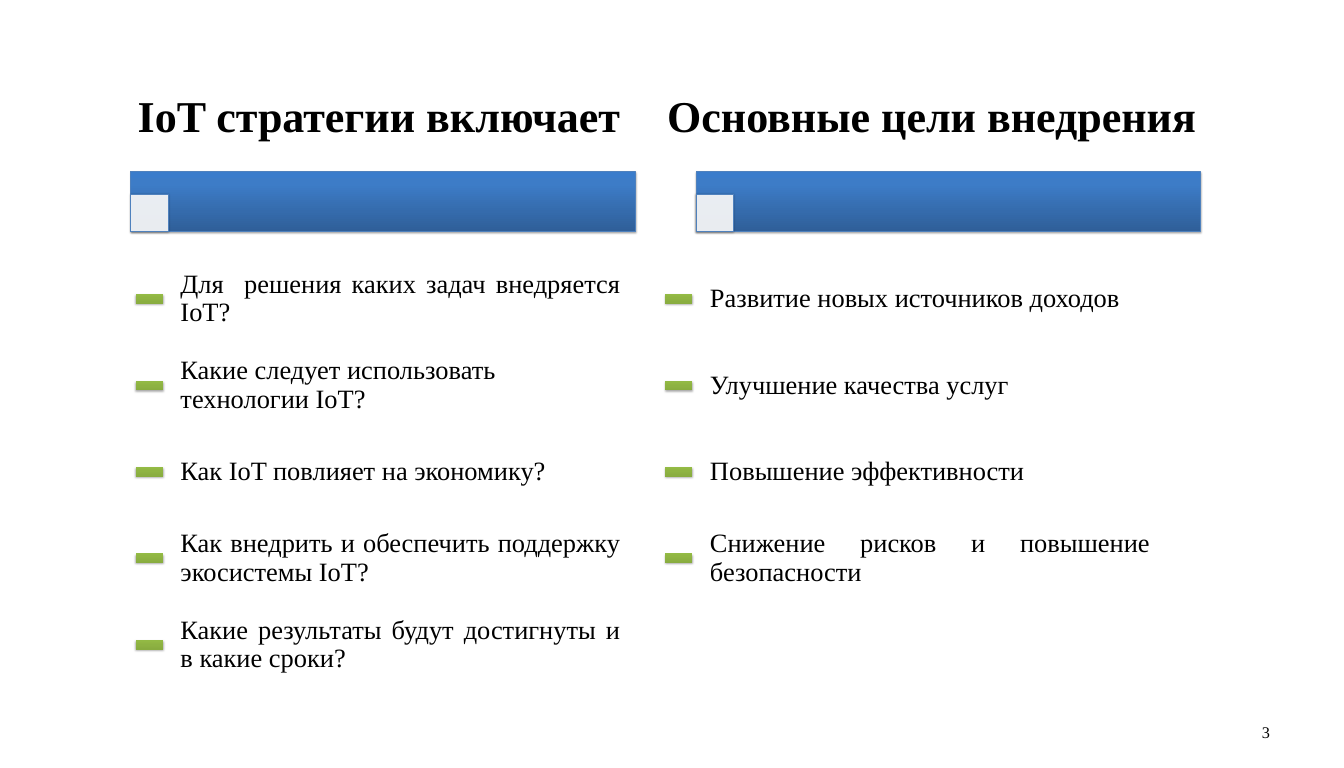
from copy import deepcopy

from lxml import etree
from pptx import Presentation
from pptx.dml.color import RGBColor
from pptx.enum import shapes, text
from pptx.oxml.ns import qn
from pptx.util import Cm, Pt

COLORS = {
    "text": "000000",
    "square": "FFFFFF",
    "outline": "4F81BD",
    "shadow": "000000",
    "blue_dark": "2F5F99",
    "blue_mid": "3D7CC7",
    "blue_light": "3A7CCB",
    "green_dark": "779737",
    "green_mid": "9BC348",
    "green_light": "9DC746",
}
FONT = "Times New Roman"
BAR_W, BAR_H, BAR_TOP = 26.26, 3.1, 5.54
MARK = 1.93
ITEM_TOP, ITEM_H, ITEM_INDENT, ITEM_W = 9.93, 4.5, 1.83, 24.43
LEFT = text.PP_ALIGN.LEFT
RIGHT = text.PP_ALIGN.RIGHT
JUSTIFY = text.PP_ALIGN.JUSTIFY


def rgb(name):
    return RGBColor.from_string(COLORS[name])


def add_text(s, box, words, size, insets, align=LEFT, bold=False, spacing=0.9):
    tf = s.shapes.add_textbox(*map(Cm, box)).text_frame
    tf.word_wrap = True
    tf.vertical_anchor = text.MSO_ANCHOR.MIDDLE
    tf.margin_left = tf.margin_right = Cm(insets[0])
    tf.margin_top = tf.margin_bottom = Cm(insets[1])
    tf.text = words
    p = tf.paragraphs[0]
    p.alignment = align
    p.line_spacing = spacing
    font = p.runs[0].font
    font.name, font.size, font.bold = FONT, Pt(size), bold
    font.color.rgb = rgb("text")


def add_shadow(sp):
    sp.shadow.inherit = False
    effects = sp._element.spPr.find(qn("a:effectLst"))
    shadow = etree.SubElement(effects, qn("a:outerShdw"), blurRad="40000",
                              dist="23000", dir="5400000", rotWithShape="0")
    color = etree.SubElement(shadow, qn("a:srgbClr"), val=COLORS["shadow"])
    etree.SubElement(color, qn("a:alpha"), val="35000")


def fill_gradient(sp, hue):
    sp.fill.gradient()
    sp.fill.gradient_angle = 90
    stops = sp._element.spPr.find(".//" + qn("a:gsLst"))
    stops.append(deepcopy(stops[-1]))
    tones = (("dark", 0), ("mid", 0.8), ("light", 1))
    for stop, (tone, position) in zip(sp.fill.gradient_stops, tones):
        stop.color.rgb = rgb(f"{hue}_{tone}")
        stop.position = position


def add_block(s, kind, box, hue=None, outlined=True):
    sp = s.shapes.add_shape(kind, *map(Cm, box))
    if hue:
        fill_gradient(sp, hue)
    else:
        sp.fill.solid()
        sp.fill.fore_color.rgb = rgb("square")
        color = sp._element.spPr.find(qn("a:solidFill"))[0]
        etree.SubElement(color, qn("a:alpha"), val="90000")
    if outlined:
        sp.line.color.rgb = rgb("outline")
        sp.line.width = Pt(0.75)
    else:
        sp.line.fill.background()
    add_shadow(sp)


def add_column(s, box, heading, items):
    x, y, w = box
    rect = shapes.MSO_SHAPE.RECTANGLE
    bar_x = x + (w - BAR_W) / 2
    bar_y = y + BAR_TOP
    add_block(s, rect, (bar_x, bar_y, BAR_W, BAR_H), "blue")
    add_block(s, rect, (bar_x, bar_y + BAR_H - MARK, MARK, MARK))
    add_text(s, (x, y, w, BAR_TOP), heading, 65, (0.36, 0.23), bold=True)
    for i, (words, align) in enumerate(items):
        top = y + ITEM_TOP + i * ITEM_H
        add_block(s, shapes.MSO_SHAPE.MATH_MINUS,
                  (x, top + (ITEM_H - MARK) / 2, MARK, MARK), "green", False)
        add_text(s, (x + ITEM_INDENT, top, ITEM_W, ITEM_H), words, 39,
                 (0.76, 0.76), align)


def add_page_number(s, box, number):
    add_text(s, box, number, 24, (0.36, 0.18), RIGHT, spacing=1.0)


def main():
    prs = Presentation()
    prs.slide_width, prs.slide_height = Cm(70), Cm(40)
    s = prs.slides.add_slide(prs.slide_layouts[6])
    add_page_number(s, (50.17, 37.08, 16.33, 2.13), "3")
    add_column(s, (6.81, 3.4, 26.26), "IoT стратегии включает", [
        ("Для  решения каких задач внедряется IoT?", JUSTIFY),
        ("Какие следует использовать технологии IoT?", LEFT),
        ("Как IoT повлияет на экономику?", JUSTIFY),
        ("Как внедрить и обеспечить поддержку экосистемы IoT?", JUSTIFY),
        ("Какие результаты будут достигнуты и в какие сроки?", JUSTIFY),
    ])
    add_column(s, (34.39, 3.4, 30.02), "Основные цели внедрения", [
        ("Развитие новых источников доходов", JUSTIFY),
        ("Улучшение качества услуг", JUSTIFY),
        ("Повышение эффективности", JUSTIFY),
        ("Снижение рисков и повышение безопасности", JUSTIFY),
    ])
    prs.save("out.pptx")


if __name__ == "__main__":
    main()
